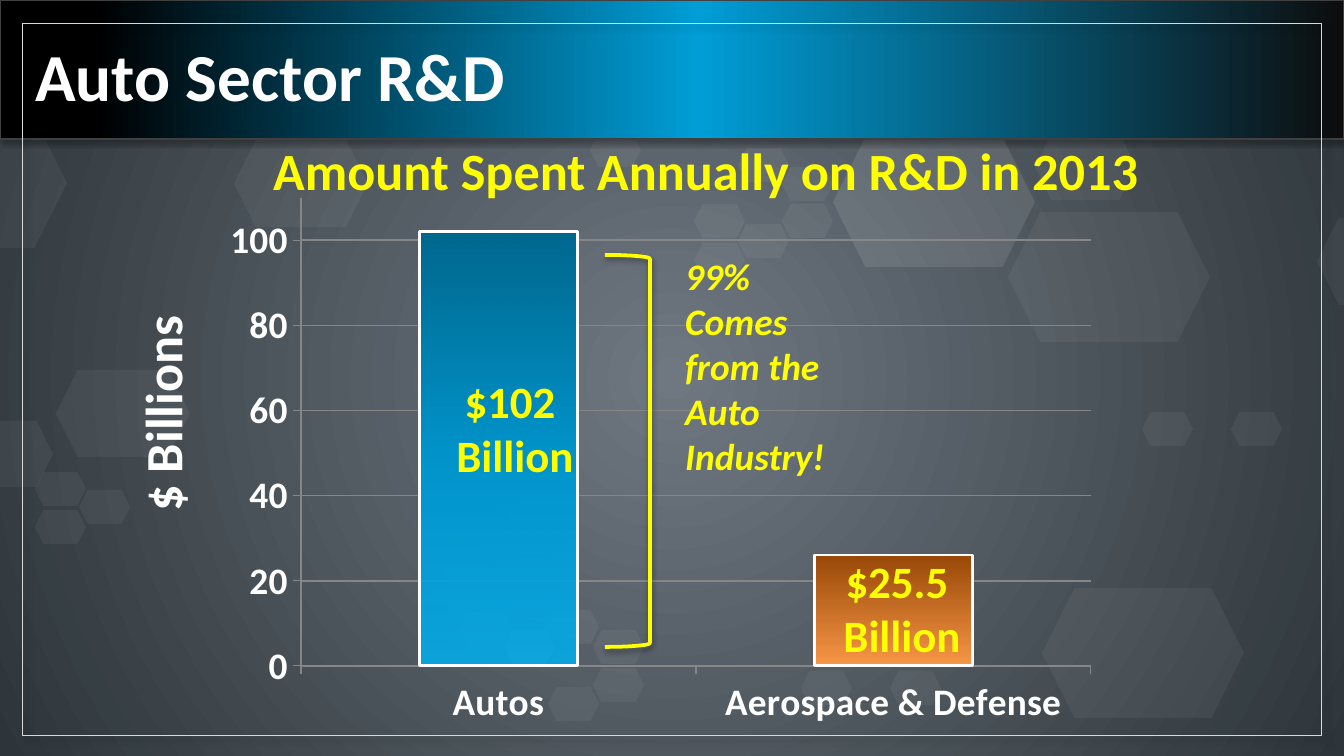
import pptx
import pptx.chart.data
import pptx.dml.color
import pptx.enum.chart
import pptx.enum.shapes
import pptx.enum.text
import pptx.oxml
import pptx.oxml.ns
import pptx.util

SLIDE_W, SLIDE_H = 1344, 756
EMU_PER_PX = 9144000 / SLIDE_W
FONT = "Calibri"
WHITE, YELLOW, GRID = "FFFFFF", "FFFF00", "868686"
LINEAR = '<a:lin ang="{}" scaled="0"/>'
CENTERED = '<a:path path="circle"><a:fillToRect l="50000" t="50000" r="50000" b="50000"/></a:path>'
SHAPE = pptx.enum.shapes.MSO_SHAPE
ALIGN = pptx.enum.text.PP_ALIGN

# (width, height, opacity %): left-top corners
HEXAGONS = {
    (202, 130, 5): [(-135, 118), (1008, 212), (1042, 588)],
    (202, 130, 10): [(833, 137)],
    (134, 87, 5): [(1317, 218), (56, 370), (234, 140)],
    (101, 66, 5): [(-48, 421), (1035, 134)],
    (51, 34, 5): [
        (35, 472), (35, 510), (79, 490),
        (782, 167), (738, 148), (694, 204), (738, 224), (590, 133), (782, 204), (694, 243),
        (1142, 412), (1231, 412),
        (593, 630), (548, 610), (548, 687), (593, 668), (460, 612),
        (845, 613), (801, 671), (890, 671)],
    (51, 34, 10): [(504, 630)],
}


def px(length):
    return pptx.util.Emu(round(length * EMU_PER_PX))


def rgb(color):
    return pptx.dml.color.RGBColor.from_string(color)


def xml(text):
    """Parse one element that uses the a: and c: prefixes."""
    names = pptx.oxml.ns.nsdecls("a", "c")
    return pptx.oxml.parse_xml(f"<a:fragment {names}>{text}</a:fragment>")[0]


def gradient(fill, stops, direction):
    """Fill with (position %, colour, opacity %) stops."""
    fill.gradient()
    grad = fill._fill._element
    for child in list(grad):
        grad.remove(child)
    marks = "".join(
        f'<a:gs pos="{pos * 1000}"><a:srgbClr val="{color}"><a:alpha val="{alpha * 1000}"/>'
        f"</a:srgbClr></a:gs>" for pos, color, alpha in stops)
    grad.append(xml(f"<a:gsLst>{marks}</a:gsLst>"))
    grad.append(xml(direction))


def outline(line, color, width):
    line.color.rgb = rgb(color)
    line.width = pptx.util.Pt(width)


class Deck:
    """Holds the style and the current slide."""

    def __init__(self):
        self.presentation = pptx.Presentation()
        self.presentation.slide_width = px(SLIDE_W)
        self.presentation.slide_height = px(SLIDE_H)
        self.slide = self.presentation.slides.add_slide(self.presentation.slide_layouts[6])

    def background(self, inner, outer):
        gradient(self.slide.background.fill, [(0, inner, 100), (100, outer, 100)], CENTERED)

    def shape(self, kind, box, line=None, shadow=None):
        """Unfilled shape; line is (colour, pt), shadow is (opacity %, blur pt, distance pt, angle)."""
        shape = self.slide.shapes.add_shape(kind, *map(px, box))
        shape.fill.background()
        if line:
            outline(shape.line, *line)
        else:
            shape.line.fill.background()
        shape.shadow.inherit = False
        if shadow:
            alpha, blur, distance, angle = shadow
            effects = shape._element.spPr.find(pptx.oxml.ns.qn("a:effectLst"))
            effects.append(xml(
                f'<a:outerShdw blurRad="{pptx.util.Pt(blur)}" dist="{pptx.util.Pt(distance)}" '
                f'dir="{angle * 60000}" rotWithShape="0"><a:srgbClr val="000000">'
                f'<a:alpha val="{alpha * 1000}"/></a:srgbClr></a:outerShdw>'))
        return shape

    def hexagon(self, box, opacity):
        shape = self.shape(SHAPE.HEXAGON, box)
        shape.fill.solid()
        shape.fill.fore_color.rgb = rgb(WHITE)
        color = shape._element.spPr.find(".//" + pptx.oxml.ns.qn("a:srgbClr"))
        color.append(xml(f'<a:alpha val="{opacity * 1000}"/>'))

    def text(self, box, words, size, color=YELLOW, align=ALIGN.LEFT, wrap=False,
             italic=False, middle=False):
        textbox = self.slide.shapes.add_textbox(*map(px, box))
        frame = textbox.text_frame
        frame.text = words
        frame.word_wrap = wrap
        if middle:
            frame.vertical_anchor = pptx.enum.text.MSO_ANCHOR.MIDDLE
        else:
            frame.auto_size = pptx.enum.text.MSO_AUTO_SIZE.SHAPE_TO_FIT_TEXT
        for paragraph in frame.paragraphs:
            paragraph.alignment = align
            for run in paragraph.runs:
                self.style(run.font, size, color)
                run.font.italic = italic
        return textbox

    def style(self, font, size, color):
        font.name = FONT
        font.size = pptx.util.Pt(size)
        font.bold = True
        font.color.rgb = rgb(color)

    def columns(self, box, plot_box, values, fills):
        """Column chart whose inner plot area covers plot_box."""
        data = pptx.chart.data.CategoryChartData()
        data.categories = list(values)
        data.add_series("Series 1", list(values.values()))
        chart = self.slide.shapes.add_chart(
            pptx.enum.chart.XL_CHART_TYPE.COLUMN_CLUSTERED, *map(px, box), data).chart
        chart.has_legend = chart.has_title = False
        chart.font.name = FONT
        chart.font.size = pptx.util.Pt(18)
        plot = chart.plots[0]
        plot.gap_width = 150
        plot.vary_by_categories = False
        for index, stops in enumerate(fills):
            column = plot.series[0].points[index].format
            gradient(column.fill, stops, LINEAR.format(90 * 60000))
            outline(column.line, WHITE, 1.5)
        for axis in (chart.category_axis, chart.value_axis):
            self.style(axis.tick_labels.font, 20, WHITE)
            axis.major_tick_mark = pptx.enum.chart.XL_TICK_MARK.OUTSIDE
            outline(axis.format.line, GRID, 0.75)
        scale = chart.value_axis
        scale.minimum_scale, scale.maximum_scale, scale.major_unit = 0, 110, 20
        outline(scale.major_gridlines.format.line, GRID, 1)

        left, top, width, height = box
        shares = {"x": (plot_box[0] - left) / width, "y": (plot_box[1] - top) / height,
                  "w": plot_box[2] / width, "h": plot_box[3] / height}
        layout = ('<c:layout><c:manualLayout><c:layoutTarget val="inner"/>'
                  '<c:xMode val="edge"/><c:yMode val="edge"/>'
                  + "".join(f'<c:{key} val="{share:.4f}"/>' for key, share in shares.items())
                  + "</c:manualLayout></c:layout>")
        area = chart._chartSpace.chart.plotArea
        for previous in area.findall(pptx.oxml.ns.qn("c:layout")):
            area.remove(previous)
        area.insert(0, xml(layout))


def main():
    deck = Deck()
    deck.background("6F7881", "2D353A")
    for (width, height, opacity), corners in HEXAGONS.items():
        for left, top in corners:
            deck.hexagon((left, top, width, height), opacity)

    banner = deck.shape(SHAPE.RECTANGLE, (0, 0, SLIDE_W, 139), ("404040", 0.75), (35, 3.1, 1.8, 90))
    gradient(banner.fill, [(7, "000000", 100), (52, "009DD6", 100), (100, "0D0D0D", 100)],
             LINEAR.format(0))
    deck.text((22, 8, 1310, 133), "Auto Sector R&D", 36, WHITE, wrap=True, middle=True)
    deck.shape(SHAPE.RECTANGLE, (23, 24, 1299, 712), ("D9D9D9", 0.5), (40, 4, 3, 45))

    deck.text((260, 132, 902, 77), "Amount Spent Annually on R&D in 2013", 28)
    deck.columns((212, 188, 896, 548), (301, 198, 790, 468),
                 {"Autos": 102, "Aerospace & Defense": 26},
                 [[(0, "00688E", 100), (50, "0094CA", 100), (100, "00B0F0", 85)],
                  [(0, "984807", 100), (100, "F79646", 100)]])
    for left, top, amount in ((432, 367, "$102"), (819, 547, "$25.5")):
        deck.text((left, top, 156, 122), f"{amount}\n Billion", 24, align=ALIGN.CENTER)
    unit = deck.text((50, 374, 224, 77), "$ Billions", 28, WHITE)
    unit.rotation = 270

    deck.text((672, 247, 202, 239), "99% Comes from the Auto Industry!", 20, wrap=True, italic=True)
    bracket = deck.shape(SHAPE.LEFT_BRACKET, (605, 255, 45, 392), (YELLOW, 2), (38, 3.1, 1.6, 90))
    bracket._element.spPr.xfrm.set("flipH", "1")
    deck.presentation.save("out.pptx")


if __name__ == "__main__":
    main()
